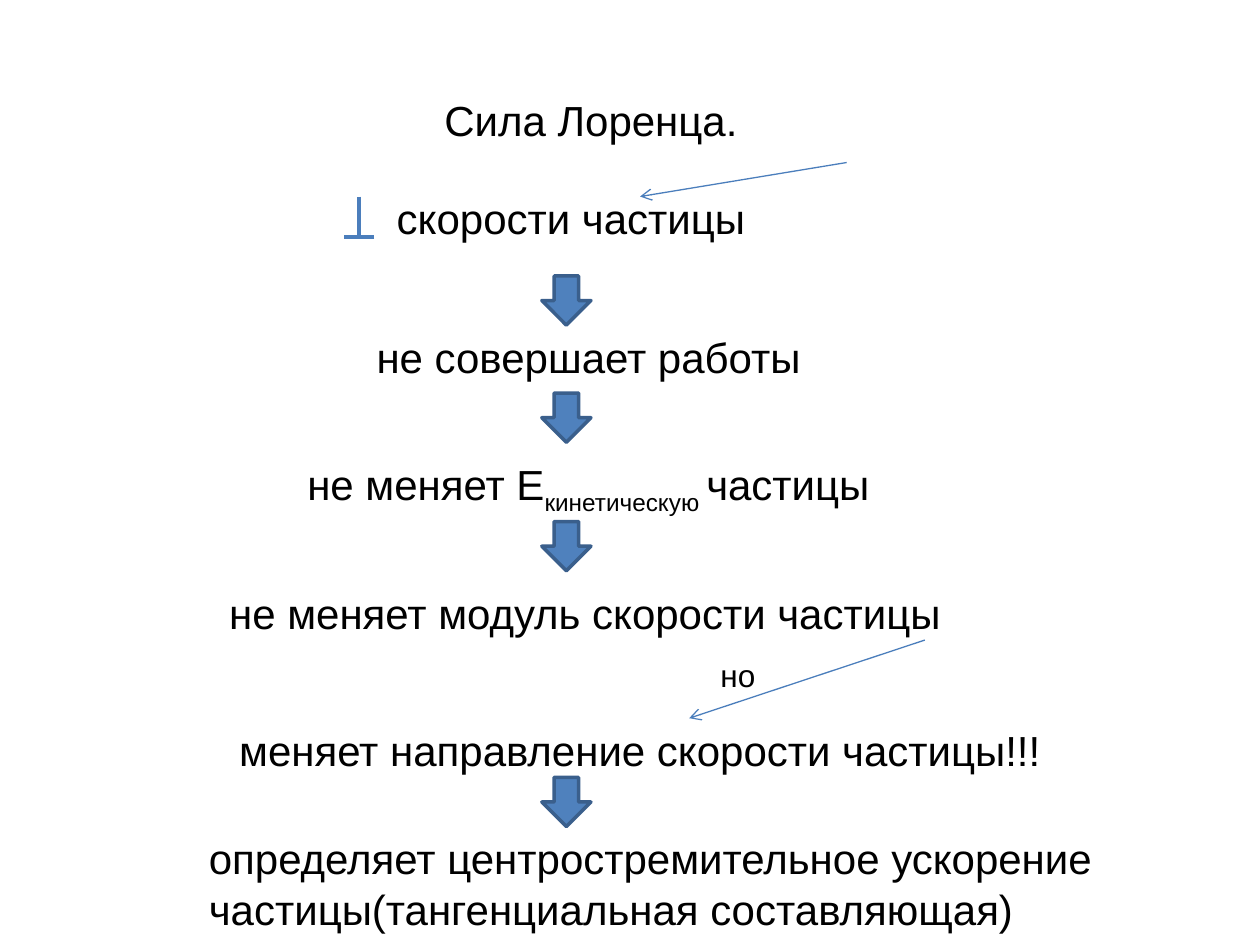
"""Build the slide on the Lorentz force and its consequences for a moving particle."""
import pptx
import pptx.util
import pptx.dml.color
import pptx.enum.shapes
import pptx.enum.text
import pptx.oxml.ns
import lxml.etree

Inches, Pt = pptx.util.Inches, pptx.util.Pt
COLORS = {"text": "000000", "line": "4B7EBC", "arrow": "4F81BD", "outline": "3A5F8C"}


def color(name):
    return pptx.dml.color.RGBColor.from_string(COLORS[name])


def add_line(shapes, start, end, width, arrow=False):
    line = shapes.add_connector(
        pptx.enum.shapes.MSO_CONNECTOR.STRAIGHT, *map(Inches, start + end))
    line.line.color.rgb = color("line")
    line.line.width = Pt(width)
    if arrow:
        lxml.etree.SubElement(
            line.line._get_or_add_ln(), pptx.oxml.ns.qn("a:tailEnd"), type="arrow")
    lxml.etree.SubElement(line._element.spPr, pptx.oxml.ns.qn("a:effectLst"))


deck = pptx.Presentation()
deck.slide_width, deck.slide_height = Inches(10), Inches(7.5)
slide = deck.slides.add_slide(deck.slide_layouts[5])

heading = slide.shapes.title
heading.left, heading.top = Inches(0), Inches(0.7)
heading.width, heading.height = Inches(9.38), Inches(0.51)
heading.text_frame.text = "Сила Лоренца."
heading.text_frame.vertical_anchor = pptx.enum.text.MSO_ANCHOR.TOP
heading.text_frame.auto_size = pptx.enum.text.MSO_AUTO_SIZE.NONE
heading_font = heading.text_frame.paragraphs[0].font
heading_font.name, heading_font.size = "Arial", Pt(24)
heading_font.color.rgb = color("text")

statements = [
    (3.05, 1.48, 3.05, 0.51, 24, ["скорости частицы"]),
    (2.89, 2.58, 4.84, 0.51, 24, ["не совершает работы"]),
    (2.34, 3.59, 5.31, 0.51, 24, ["не меняет Е", "кинетическую ", "частицы"]),
    (1.72, 4.61, 6.25, 0.51, 24, ["не меняет модуль скорости частицы"]),
    (5.62, 5.16, 0.94, 0.4, 18, ["но"]),
    (1.8, 5.7, 8.59, 0.51, 24, ["меняет направление скорости частицы!!!"]),
    (1.56, 6.56, 8.67, 0.91, 24,
     ["определяет центростремительное ускорение частицы(тангенциальная составляющая)"]),
]
for left, top, width, height, size, parts in statements:
    statement = slide.shapes.add_textbox(*map(Inches, (left, top, width, height)))
    statement.text_frame.word_wrap = True
    paragraph = statement.text_frame.paragraphs[0]
    paragraph.font.name, paragraph.font.size = "Arial", Pt(size)
    paragraph.font.color.rgb = color("text")
    for index, part in enumerate(parts):
        run = paragraph.add_run()
        run.text = part
        if index == 1:
            run.font._element.set("baseline", "-25000")

for top in (2.19, 3.12, 4.14, 6.17):
    consequence = slide.shapes.add_shape(
        pptx.enum.shapes.MSO_SHAPE.DOWN_ARROW,
        Inches(4.3), Inches(top), Inches(0.39), Inches(0.39))
    consequence.shadow.inherit = False
    consequence.fill.solid()
    consequence.fill.fore_color.rgb = color("arrow")
    consequence.line.color.rgb = color("outline")
    consequence.line.width = Pt(2)

perpendicular = slide.shapes.add_group_shape()
add_line(perpendicular.shapes, (2.85, 1.56), (2.85, 1.88), 2.25)
add_line(perpendicular.shapes, (2.97, 1.88), (2.73, 1.88), 2.25)

add_line(slide.shapes, (6.72, 1.29), (5.08, 1.56), 0.75, arrow=True)
add_line(slide.shapes, (7.34, 5.08), (5.47, 5.7), 0.75, arrow=True)

deck.save("out.pptx")
